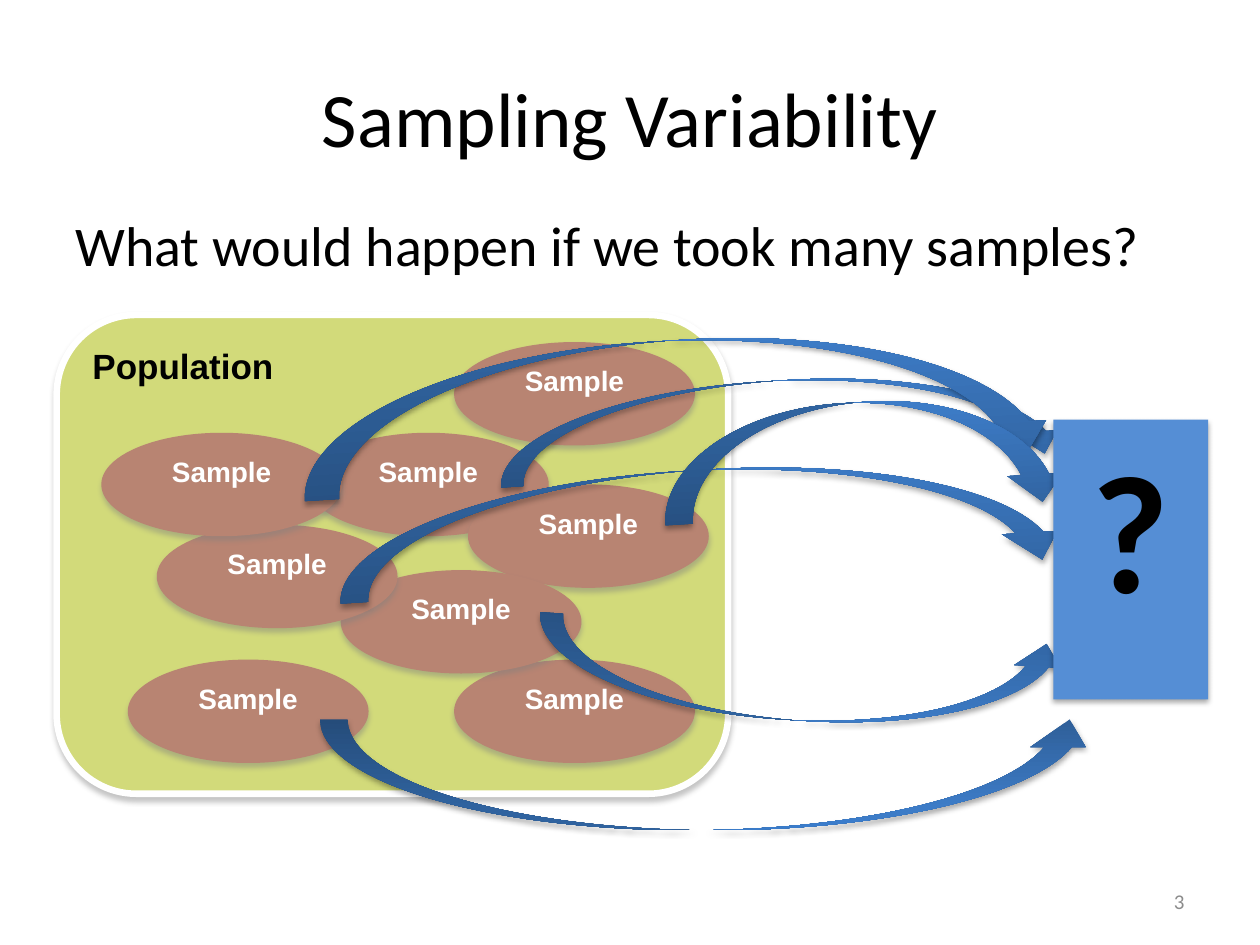
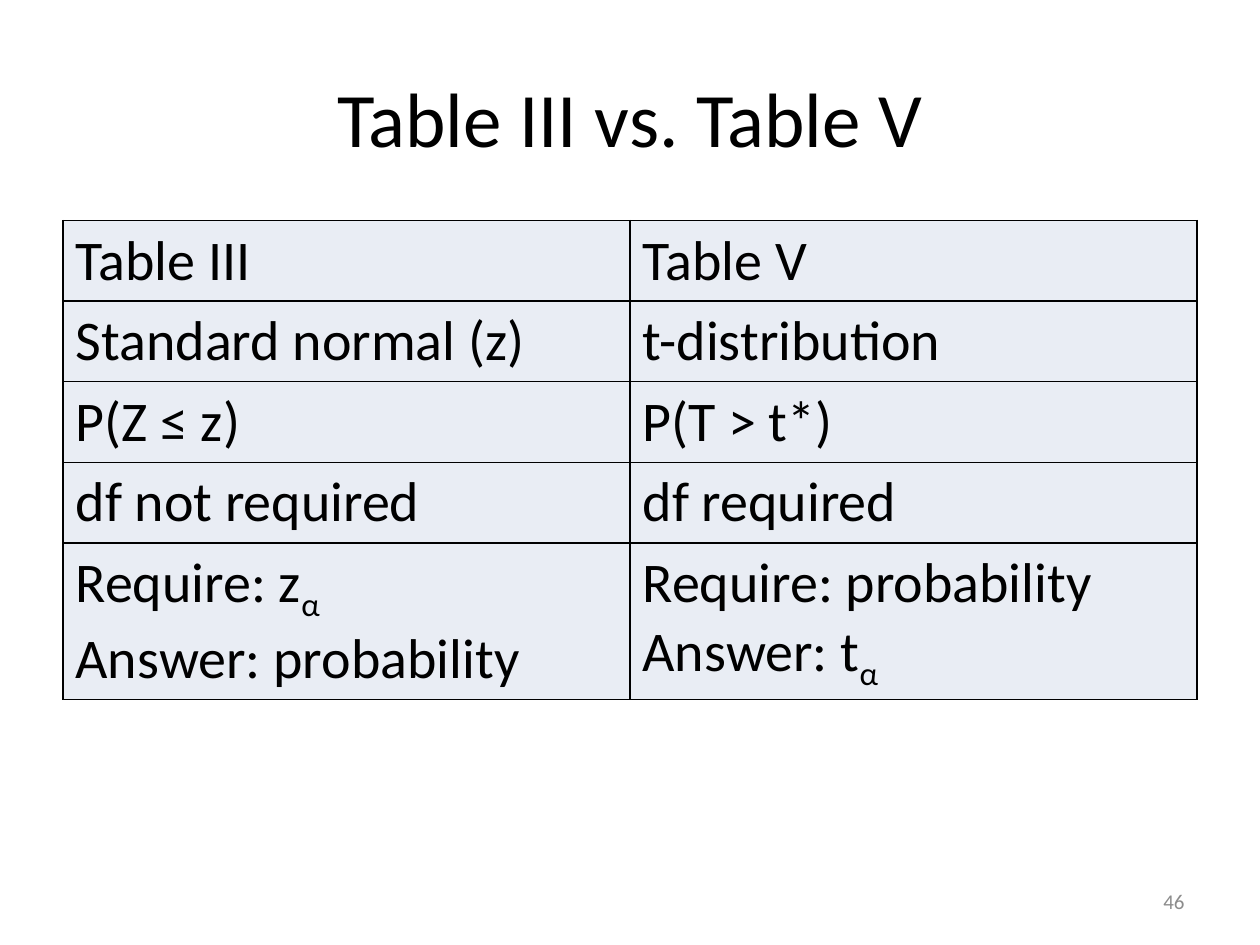
from pptx import Presentation
from pptx.dml.color import RGBColor
from pptx.enum.shapes import MSO_SHAPE
from pptx.enum.text import MSO_ANCHOR, PP_ALIGN
from pptx.oxml import parse_xml
from pptx.oxml.ns import nsdecls, qn
from pptx.util import Inches, Pt

W, H = 10, 7.5
MARGIN = W / 20
BLACK, WHITE, GREY = "000000", "FFFFFF", "8C8C8C"
GREEN, CLAY, BLUE, PALE = "D2DA7A", "B88472", "558ED5", "E9EDF4"
GRADIENT = [(0, "2F5F99"), (80, "3D7CC7"), (100, "3A7CCB")]
SOFT = ("808080", 45, 3, 2.4)      # colour, opacity, blur, distance
DEEP = (BLACK, 35, 3.1, 1.8)
LEFT, CENTER, RIGHT = PP_ALIGN.LEFT, PP_ALIGN.CENTER, PP_ALIGN.RIGHT
TOP, MIDDLE = MSO_ANCHOR.TOP, MSO_ANCHOR.MIDDLE


def write(tf, text, size=32, font="Calibri", color=BLACK, bold=False,
          align=LEFT, anchor=TOP, wrap=True):
    """Lines split at newlines; parts between tildes are subscripts."""
    tf.word_wrap, tf.vertical_anchor = wrap, anchor
    for i, line in enumerate(text.split("\n")):
        p = tf.add_paragraph() if i else tf.paragraphs[0]
        p.alignment = align
        for j, part in enumerate(line.split("~")):
            if part:
                r = p.add_run()
                r.text = part
                r.font.size, r.font.name, r.font.bold = Pt(size), font, bold
                r.font.color.rgb = RGBColor.from_string(color)
                if j % 2:
                    r.font._element.set("baseline", "-25000")


def add_shape(s, kind, box, shadow, fill=None, line=None, width=0.79):
    """Preset shape with a downward shadow; no fill means the arrow gradient."""
    sp = s.shapes.add_shape(kind, *map(Inches, box))
    spPr = sp._element.spPr
    if fill:
        sp.fill.solid()
        sp.fill.fore_color.rgb = RGBColor.from_string(fill)
    else:
        stops = "".join(f'<a:gs pos="{pos * 1000}"><a:srgbClr val="{c}"/></a:gs>'
                        for pos, c in GRADIENT)
        spPr.append(parse_xml(
            f'<a:gradFill rotWithShape="1" {nsdecls("a")}><a:gsLst>{stops}</a:gsLst>'
            '<a:lin ang="16200000" scaled="0"/></a:gradFill>'))
    if line:
        sp.line.color.rgb = RGBColor.from_string(line)
        sp.line.width = Pt(width)
    else:
        sp.line.fill.background()
    color, opacity, blur, dist = shadow
    spPr.append(parse_xml(
        f'<a:effectLst {nsdecls("a")}><a:outerShdw blurRad="{Pt(blur)}" dist="{Pt(dist)}" '
        f'dir="5400000" rotWithShape="0"><a:srgbClr val="{color}">'
        f'<a:alpha val="{opacity * 1000}"/></a:srgbClr></a:outerShdw></a:effectLst>'))
    return sp


prs = Presentation()
prs.slide_width, prs.slide_height = Inches(W), Inches(H)

# Title and page number of each slide
slides = []
for title, number in [("Sampling Variability", "3"), ("Table III vs. Table V", "46")]:
    s = prs.slides.add_slide(prs.slide_layouts[6])
    tb = s.shapes.add_textbox(*map(Inches, (MARGIN, 0.3, W - 2 * MARGIN, H / 6)))
    write(tb.text_frame, title, size=44, align=CENTER, anchor=MIDDLE)
    tb = s.shapes.add_textbox(*map(Inches, (7.17, 6.95, 2.33, 0.4)))
    write(tb.text_frame, number, size=12, color=GREY, align=RIGHT, anchor=MIDDLE)
    slides.append(s)

# Slide 1: question
s = slides[0]
tb = s.shapes.add_textbox(*map(Inches, (MARGIN, 1.62, W - 2 * MARGIN, 4.95)))
write(tb.text_frame, "What would happen if we took many samples?")

# Population and its samples
sp = add_shape(s, MSO_SHAPE.ROUNDED_RECTANGLE, (0.45, 2.5, 5.33, 3.8), SOFT,
               GREEN, WHITE, 3.75)
write(sp.text_frame, "Population", size=20, font="Arial", bold=True)
for x, y in [(2.45, 3.44), (3.72, 3.85), (3.61, 5.24), (3.61, 2.72),
             (2.71, 4.53), (1.25, 4.17), (1.02, 5.24), (0.81, 3.44)]:
    sp = add_shape(s, MSO_SHAPE.OVAL, (x, y, 1.9, 0.81), SOFT, CLAY, CLAY)
    write(sp.text_frame, "Sample", size=16, font="Arial", color=WHITE, bold=True,
          align=CENTER)

# Arrows from the samples to the unknown: box, rotation, flipped
for box, rotation, flipped in [
        ((3.95, 3.02, 4.5, 0.71), 356.4, False),
        ((4.26, 4.99, 4.21, 0.73), 3.6, True),
        ((2.67, 3.73, 5.8, 0.88), 356.4, False),
        ((2.38, 2.7, 6, 1.09), 356.4, False),
        ((2.54, 5.71, 6.17, 0.88), 0, True),
        ((5.25, 3.19, 3.22, 0.88), 356.4, False)]:
    sp = add_shape(s, MSO_SHAPE.CURVED_DOWN_ARROW, box, DEEP)
    sp.rotation = rotation
    if flipped:
        sp._element.spPr.find(qn("a:xfrm")).set("flipV", "1")

sp = add_shape(s, MSO_SHAPE.RECTANGLE, (8.36, 3.33, 1.23, 2.22), DEEP, BLUE)
write(sp.text_frame, "?", size=96, bold=True, align=CENTER, wrap=False)

# Slide 2: comparison table
s = slides[1]
rows = [("Table III", "Table V"),
        ("Standard normal (z)", "t-distribution"),
        ("P(Z ≤ z)", "P(T > t*)"),
        ("df not required", "df required"),
        ("Require: z~α~\nAnswer: probability", "Require: probability\nAnswer: t~α~")]
heights = [0.64] * 4 + [1.24]
table = s.shapes.add_table(len(rows), 2, Inches(MARGIN), Inches(1.75),
                           Inches(W - 2 * MARGIN), Inches(sum(heights))).table
table.first_row = table.horz_banding = False
for i, row in enumerate(rows):
    table.rows[i].height = Inches(heights[i])
    for j, text in enumerate(row):
        cell = table.cell(i, j)
        write(cell.text_frame, text)
        for side in "LRTB":
            cell._tc.get_or_add_tcPr().append(parse_xml(
                f'<a:ln{side} w="{Pt(1)}" {nsdecls("a")}><a:solidFill>'
                f'<a:srgbClr val="{BLACK}"/></a:solidFill></a:ln{side}>'))
        cell.fill.solid()
        cell.fill.fore_color.rgb = RGBColor.from_string(PALE)

prs.save("out.pptx")
